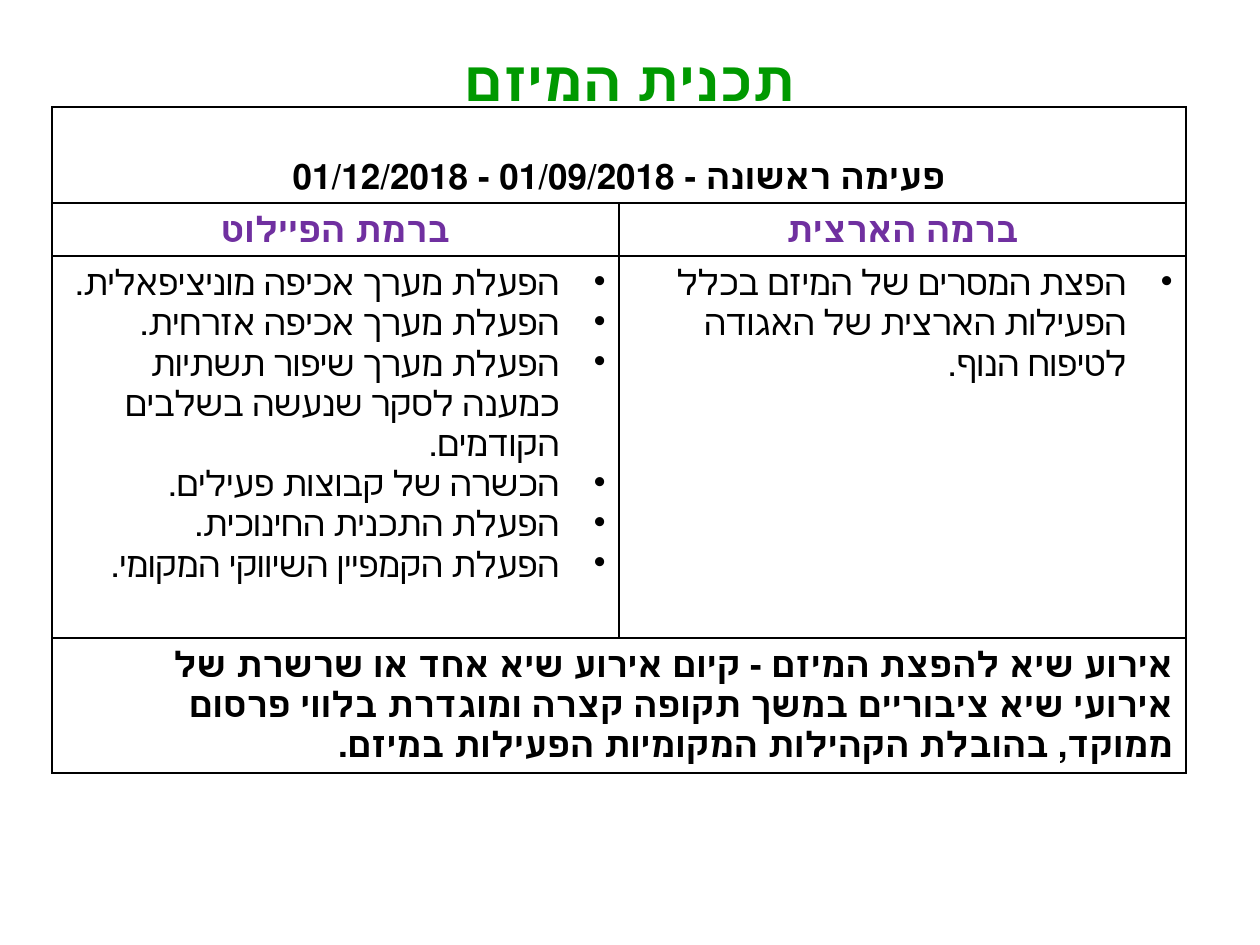
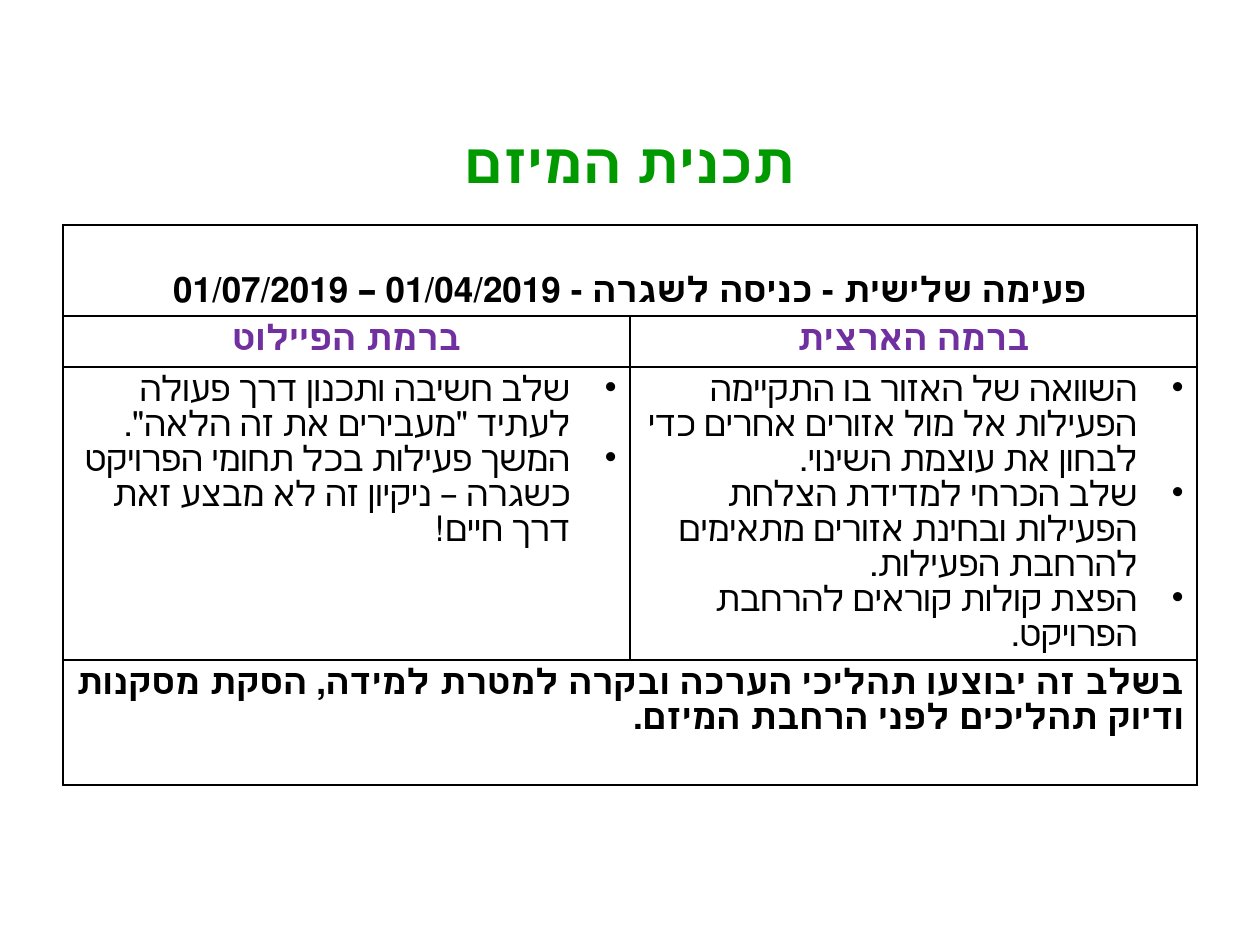
from lxml.etree import SubElement
from pptx import Presentation
from pptx.dml.color import RGBColor
from pptx.enum.text import MSO_ANCHOR, PP_ALIGN
from pptx.oxml.ns import qn
from pptx.util import Emu, Pt

SCALE = 914400 / 126
GREEN, PURPLE, BLACK = "009900", "7030A0", "000000"
TITLE = "תכנית המיזם"
LEVELS = ["ברמת הפיילוט", "ברמה הארצית"]
COL_W = 567
BULLET_INDENT = 47

SLIDES = [
    {
        "title_top": 0, "left": 52, "top": 107, "rows": [96, 53, 382, 135], "leading": 23,
        "stage": "פעימה ראשונה - 01/09/2018 - 01/12/2018",
        "bullets": [
            ["הפעלת מערך אכיפה מוניציפאלית.",
             "הפעלת מערך אכיפה אזרחית.",
             "הפעלת מערך שיפור תשתיות כמענה לסקר שנעשה בשלבים הקודמים.",
             "הכשרה של קבוצות פעילים.",
             "הפעלת התכנית החינוכית.",
             "הפעלת הקמפיין השיווקי המקומי."],
            ["הפצת המסרים של המיזם בכלל הפעילות הארצית של האגודה לטיפוח הנוף."],
        ],
        "summary": "אירוע שיא להפצת המיזם - קיום אירוע שיא אחד או שרשרת של אירועי שיא ציבוריים "
                   "במשך תקופה קצרה ומוגדרת בלווי פרסום ממוקד, בהובלת הקהילות המקומיות הפעילות במיזם.",
    },
    {
        "title_top": 82, "left": 63, "top": 225, "rows": [91, 51, 293, 125], "leading": 20,
        "stage": "פעימה שלישית - כניסה לשגרה - 01/04/2019 – 01/07/2019",
        "bullets": [
            ["שלב חשיבה ותכנון דרך פעולה לעתיד \"מעבירים את זה הלאה\".",
             "המשך פעילות בכל תחומי הפרויקט כשגרה – ניקיון זה לא מבצע זאת דרך חיים!"],
            ["השוואה של האזור בו התקיימה הפעילות אל מול אזורים אחרים כדי לבחון את עוצמת השינוי.",
             "שלב הכרחי למדידת הצלחת הפעילות ובחינת אזורים מתאימים להרחבת הפעילות.",
             "הפצת קולות קוראים להרחבת הפרויקט."],
        ],
        "summary": "בשלב זה יבוצעו תהליכי הערכה ובקרה למטרת למידה, הסקת מסקנות ודיוק תהליכים לפני הרחבת המיזם.",
    },
]


def px(n):
    return Emu(round(n * SCALE))


def write(p, text, align, size=20, color=BLACK, bold=True, font="Calibri", leading=None, bullet=False):
    pPr = p._p.get_or_add_pPr()
    pPr.set("rtl", "1")
    if bullet:
        pPr.set("marL", str(px(BULLET_INDENT)))
        pPr.set("indent", str(-px(BULLET_INDENT)))
        SubElement(pPr, qn("a:buChar"), char="•")
    p.alignment = align
    if leading:
        p.line_spacing = Pt(leading)
    r = p.add_run()
    r.text = text
    r.font.size = Pt(size)
    r.font.bold = bold
    r.font.name = font
    r.font.color.rgb = RGBColor.from_string(color)


prs = Presentation()
prs.slide_width, prs.slide_height = px(1260), px(945)

for plan in SLIDES:
    s = prs.slides.add_slide(prs.slide_layouts[6])
    tf = s.shapes.add_textbox(px(63), px(plan["title_top"]), px(1134), px(158)).text_frame
    tf.word_wrap = True
    tf.vertical_anchor = MSO_ANCHOR.MIDDLE
    write(tf.paragraphs[0], TITLE, PP_ALIGN.CENTER, 32, GREEN, font="Roboto")

    rows = plan["rows"]
    table = s.shapes.add_table(len(rows), 2, px(plan["left"]), px(plan["top"]),
                               px(2 * COL_W), px(sum(rows))).table
    table.first_row = table.horz_banding = False
    for col in table.columns:
        col.width = px(COL_W)
    for row, height in zip(table.rows, rows):
        row.height = px(height)
    for cell in table.iter_cells():
        tcPr = cell._tc.get_or_add_tcPr()
        for side in ("a:lnL", "a:lnR", "a:lnT", "a:lnB"):
            ln = SubElement(tcPr, qn(side), w=str(Pt(1)))
            SubElement(SubElement(ln, qn("a:solidFill")), qn("a:srgbClr"), val=BLACK)
        cell.fill.background()
    for i in (0, 3):
        table.cell(i, 0).merge(table.cell(i, 1))

    leading = plan["leading"]
    stage = table.cell(0, 0)
    stage.vertical_anchor = MSO_ANCHOR.BOTTOM
    write(stage.text_frame.paragraphs[0], plan["stage"], PP_ALIGN.CENTER, leading=leading)
    for j, (level, bullets) in enumerate(zip(LEVELS, plan["bullets"])):
        write(table.cell(1, j).text_frame.paragraphs[0], level, PP_ALIGN.CENTER,
              color=PURPLE, leading=leading)
        tf = table.cell(2, j).text_frame
        for k, text in enumerate(bullets):
            p = tf.add_paragraph() if k else tf.paragraphs[0]
            font = "Roboto" if 0 < k == len(bullets) - 1 else "Calibri"
            write(p, text, PP_ALIGN.RIGHT, bold=False, font=font, leading=leading, bullet=True)
    write(table.cell(3, 0).text_frame.paragraphs[0], plan["summary"], PP_ALIGN.RIGHT, leading=leading)

prs.save("out.pptx")
